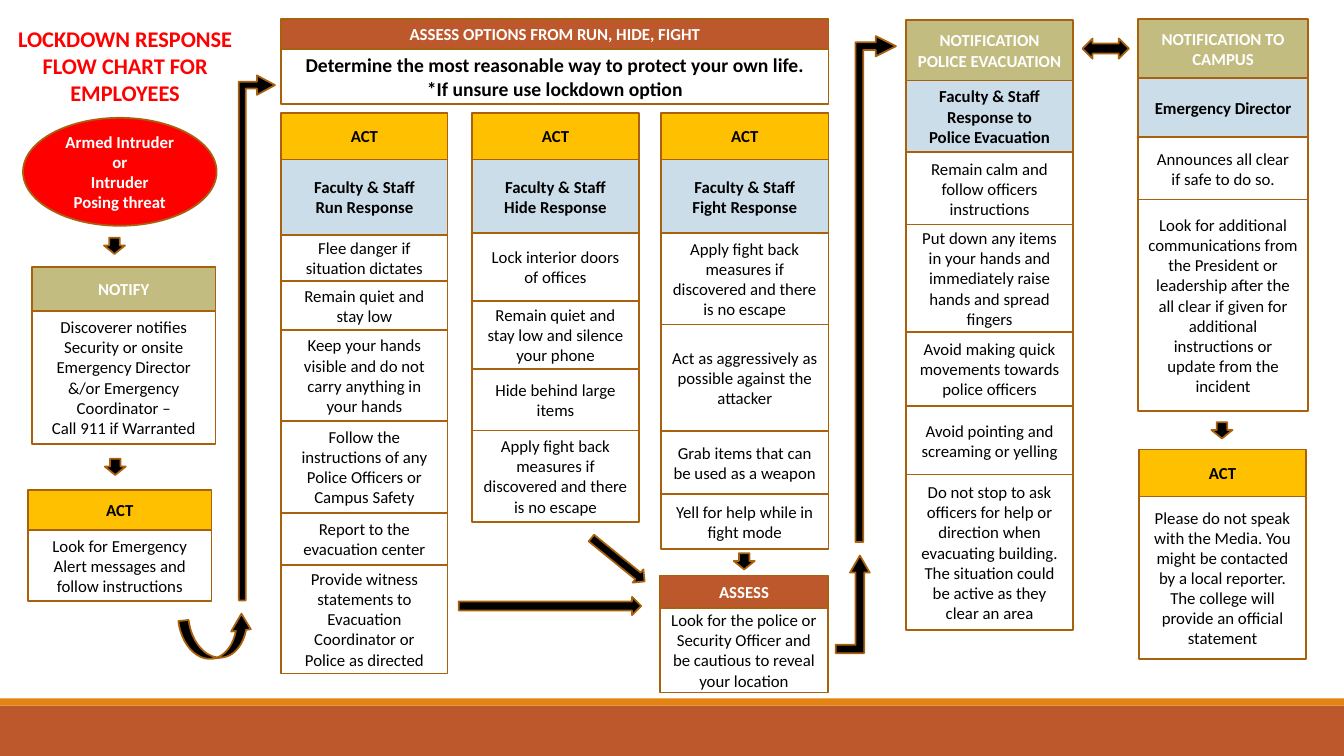
from dataclasses import dataclass
from typing import Optional

from pptx import Presentation
from pptx.dml.color import RGBColor
from pptx.enum.shapes import MSO_SHAPE as Preset
from pptx.enum.text import MSO_ANCHOR as Anchor, PP_ALIGN as Align
from pptx.shapes.autoshape import Shape
from pptx.slide import Slide
from pptx.util import Cm, Pt

WHITE = RGBColor(0xFF, 0xFF, 0xFF)
BLACK = RGBColor(0, 0, 0)
RED = RGBColor(0xFF, 0, 0)
RUST = RGBColor(0xBD, 0x58, 0x2C)
ORANGE = RGBColor(0xE4, 0x83, 0x12)
BROWN = RGBColor(0xA9, 0x61, 0x0D)
OLIVE = RGBColor(0xC2, 0xBC, 0x80)
AMBER = RGBColor(0xFF, 0xC0, 0)
PALE_BLUE = RGBColor(0xCC, 0xDD, 0xEA)
FONT = "Calibri"
SLIDE_WIDTH, SLIDE_HEIGHT = 33.87, 19.05


@dataclass(frozen=True)
class Style:
    fill: RGBColor
    color: RGBColor = BLACK
    bold: bool = True
    size: int = 12


STEP = Style(WHITE, bold=False)
RULE = Style(WHITE, size=14)
ACT = Style(AMBER)
ROLE = Style(PALE_BLUE)
NOTICE = Style(OLIVE, WHITE)
ASSESS = Style(RUST, WHITE)
THREAT = Style(RED, WHITE)
TITLE = Style(WHITE, RED, size=16)


@dataclass(frozen=True)
class Cell:
    height: float
    text: str
    style: Style = STEP


@dataclass(frozen=True)
class Stack:
    left: float
    top: float
    width: float
    cells: tuple[Cell, ...]


@dataclass(frozen=True)
class Arrow:
    preset: Preset
    left: float
    top: float
    width: float
    height: float
    adjustments: tuple[float, ...] = ()
    rotation: float = 0
    mirrored: bool = False


ACT_CELL = Cell(1.18, "ACT", ACT)
FIGHT_BACK = Cell(2.3, "Apply fight back measures if discovered and there is no escape")

STACKS = (
    Stack(0.81, 6.73, 4.62, (
        Cell(1.1, "NOTIFY", NOTICE),
        Cell(3.36, "Discoverer notifies Security or onsite Emergency Director &/or "
                   "Emergency Coordinator –\nCall 911 if Warranted"),
    )),
    Stack(0.71, 12.34, 4.62, (
        Cell(1.02, "ACT", ACT),
        Cell(1.78, "Look for Emergency Alert messages and follow instructions"),
    )),
    Stack(7.09, 0.48, 13.79, (
        Cell(0.76, "ASSESS OPTIONS FROM RUN, HIDE, FIGHT", ASSESS),
        Cell(1.38, "Determine the most reasonable way to protect your own life.\n"
                   "*If unsure use lockdown option", RULE),
    )),
    Stack(7.09, 2.84, 4.19, (
        ACT_CELL,
        Cell(1.9, "Faculty & Staff\nRun Response", ROLE),
        Cell(1.17, "Flee danger if situation dictates"),
        Cell(1.22, "Remain quiet and stay low"),
        Cell(2.3, "Keep your hands visible and do not carry anything in your hands"),
        Cell(2.31, "Follow the instructions of any Police Officers or Campus Safety"),
        Cell(1.31, "Report to the evacuation center"),
        Cell(2.74, "Provide witness statements to Evacuation Coordinator or\n"
                   "Police as directed"),
    )),
    Stack(11.89, 2.84, 4.22, (
        ACT_CELL,
        Cell(1.86, "Faculty & Staff\nHide Response", ROLE),
        Cell(1.7, "Lock interior doors\nof offices"),
        Cell(1.71, "Remain quiet and stay low and silence your phone"),
        Cell(1.56, "Hide behind large items"),
        FIGHT_BACK,
    )),
    Stack(16.66, 2.84, 4.22, (
        ACT_CELL,
        Cell(1.86, "Faculty & Staff\nFight Response", ROLE),
        FIGHT_BACK,
        Cell(2.69, "Act as aggressively as possible against the attacker"),
        Cell(1.58, "Grab items that can be used as a weapon"),
        Cell(1.39, "Yell for help while in fight mode"),
    )),
    Stack(16.64, 14.5, 4.22, (
        Cell(0.82, "ASSESS", ASSESS),
        Cell(2.13, "Look for the police or Security Officer and be cautious to "
                   "reveal your location"),
    )),
    Stack(22.83, 0.51, 4.22, (
        Cell(1.52, "NOTIFICATION POLICE EVACUATION", NOTICE),
        Cell(1.81, "Faculty & Staff Response to\nPolice Evacuation", ROLE),
        Cell(1.82, "Remain calm and follow officers instructions"),
        Cell(2.7, "Put down any items in your hands and immediately raise hands "
                  "and spread fingers"),
        Cell(1.88, "Avoid making quick movements towards police officers"),
        Cell(1.72, "Avoid pointing and screaming or yelling"),
        Cell(3.92, "Do not stop to ask officers for help or direction when evacuating "
                   "building. The situation could be active as they clear an area"),
    )),
    Stack(28.68, 0.48, 4.29, (
        Cell(1.48, "NOTIFICATION TO CAMPUS", NOTICE),
        Cell(1.5, "Emergency Director", ROLE),
        Cell(1.57, "Announces all clear\nif safe to do so."),
        Cell(5.33, "Look for additional communications from the President or leadership "
                   "after the all clear if given for additional instructions or update "
                   "from the incident"),
    )),
    Stack(28.7, 11.33, 4.22, (
        ACT_CELL,
        Cell(4.1, "Please do not speak with the Media. You might be contacted by a "
                  "local reporter. The college will provide an official statement"),
    )),
)

DOWN_ARROW_CORNERS = ((2.62, 5.99), (2.64, 11.56), (18.49, 13.94), (30.53, 10.64))
ARROWS = (
    *(Arrow(Preset.DOWN_ARROW, left, top, 0.53, 0.41, (0.5, 0.52))
      for left, top in DOWN_ARROW_CORNERS),
    Arrow(Preset.BENT_ARROW, 6.02, 1.9, 0.91, 13.23, (0.19, 0.27, 0.5, 0)),
    Arrow(Preset.BENT_ARROW, 21.56, 0.91, 1.02, 12.75, (0.19, 0.25, 0.5, 0)),
    Arrow(Preset.CURVED_DOWN_ARROW, 4.55, 15.54, 1.85, 1.04, (0.25, 0.48, 0.4), 173.3, True),
    Arrow(Preset.BENT_UP_ARROW, 21.06, 14, 0.86, 2.46, (0.25, 0.29, 0.5)),
    Arrow(Preset.RIGHT_ARROW, 14.71, 13.89, 1.73, 0.43, rotation=39.1),
    Arrow(Preset.RIGHT_ARROW, 11.56, 15.04, 4.6, 0.46),
    Arrow(Preset.LEFT_RIGHT_ARROW, 27.28, 0.97, 1.17, 0.51),
)


def write(shape: Shape, text: str, style: Style) -> None:
    frame = shape.text_frame
    frame.word_wrap = True
    frame.text = text
    for paragraph in frame.paragraphs:
        paragraph.alignment = Align.CENTER
        for run in paragraph.runs:
            run.font.name = FONT
            run.font.size = Pt(style.size)
            run.font.bold = style.bold
            run.font.color.rgb = style.color


def add_filled(slide: Slide, preset: Preset, left: float, top: float, width: float,
               height: float, fill: RGBColor, line: Optional[RGBColor] = BROWN) -> Shape:
    shape = slide.shapes.add_shape(preset, Cm(left), Cm(top), Cm(width), Cm(height))
    shape.shadow.inherit = False
    shape.fill.solid()
    shape.fill.fore_color.rgb = fill
    if line is None:
        shape.line.fill.background()
    else:
        shape.line.color.rgb = line
        shape.line.width = Pt(1.25)
    return shape


def add_stack(slide: Slide, stack: Stack) -> None:
    """Draw the cells one below the other, without gaps."""
    top = stack.top
    for cell in stack.cells:
        box = add_filled(slide, Preset.RECTANGLE, stack.left, top, stack.width,
                         cell.height, cell.style.fill)
        box.text_frame.vertical_anchor = Anchor.MIDDLE
        write(box, cell.text, cell.style)
        top += cell.height


def add_arrow(slide: Slide, arrow: Arrow) -> None:
    shape = add_filled(slide, arrow.preset, arrow.left, arrow.top, arrow.width,
                       arrow.height, BLACK)
    for index, value in enumerate(arrow.adjustments):
        shape.adjustments[index] = value
    shape.rotation = arrow.rotation
    if arrow.mirrored:
        shape.element.spPr.xfrm.set("flipH", "1")


def main() -> None:
    deck = Presentation()
    deck.slide_width, deck.slide_height = Cm(SLIDE_WIDTH), Cm(SLIDE_HEIGHT)
    slide = deck.slides.add_slide(deck.slide_layouts[6])

    for top, height, color in ((17.78, 1.27, RUST), (17.6, 0.18, ORANGE)):
        add_filled(slide, Preset.RECTANGLE, 0, top, SLIDE_WIDTH, height, color, None)

    title = slide.shapes.add_textbox(Cm(0.13), Cm(0.51), Cm(6.05), Cm(2.31))
    write(title, "LOCKDOWN RESPONSE FLOW CHART FOR EMPLOYEES", TITLE)

    threat = add_filled(slide, Preset.FLOWCHART_CONNECTOR, 0.58, 2.97, 4.88, 2.72, THREAT.fill)
    threat.text_frame.vertical_anchor = Anchor.MIDDLE
    write(threat, "Armed Intruder or\nIntruder\nPosing threat", THREAT)

    for stack in STACKS:
        add_stack(slide, stack)
    for arrow in ARROWS:
        add_arrow(slide, arrow)
    deck.save("out.pptx")


if __name__ == "__main__":
    main()
